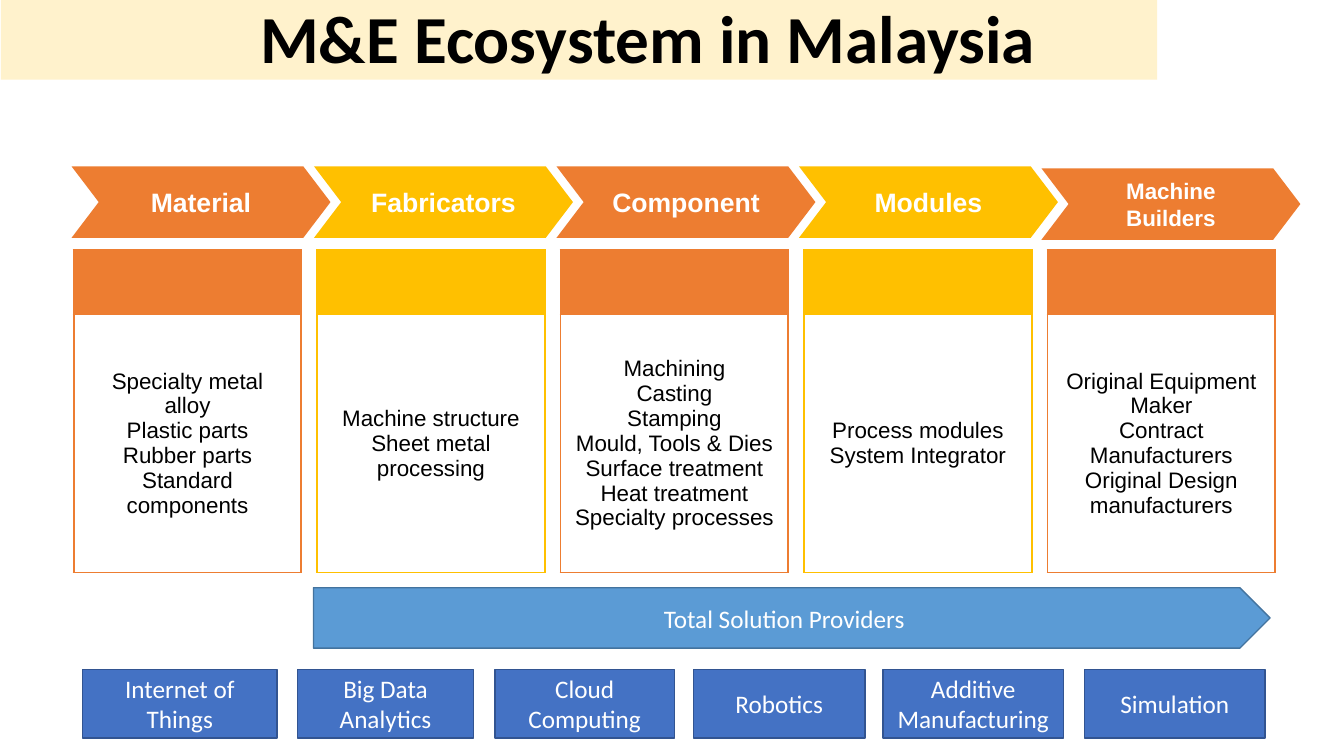
from lxml.etree import SubElement
from pptx import Presentation
from pptx.dml.color import RGBColor
from pptx.enum.shapes import MSO_SHAPE
from pptx.enum.text import MSO_ANCHOR, PP_ALIGN
from pptx.oxml.ns import qn
from pptx.util import Pt

ORANGE, GOLD = "ED7D31", "FFC000"
CREAM, WHITE, BLACK = "FFF2CC", "FFFFFF", "000000"
SKY, SKY_EDGE = "5B9BD5", "43739E"
BLUE, BLUE_EDGE = "4472C4", "325491"

TITLE = "M&E Ecosystem in Malaysia"
STAGES = [  # name, label size, colour, activities
    ("Material", 19, ORANGE,
     ["Specialty metal alloy", "Plastic parts", "Rubber parts",
      "Standard components"]),
    ("Fabricators", 19, GOLD,
     ["Machine structure", "Sheet metal processing"]),
    ("Component", 19, ORANGE,
     ["Machining", "Casting", "Stamping", "Mould, Tools & Dies",
      "Surface treatment", "Heat treatment", "Specialty processes"]),
    ("Modules", 19, GOLD, ["Process modules", "System Integrator"]),
    ("Machine Builders", 16, ORANGE,
     ["Original Equipment Maker", "Contract Manufacturers",
      "Original Design manufacturers"]),
]
PROVIDERS = "Total Solution Providers"
TECHNOLOGIES = [  # name, left, width
    ("Internet of Things", 59, 139),
    ("Big Data Analytics", 212.4, 126),
    ("Cloud Computing", 353.5, 128.2),
    ("Robotics", 495.4, 122.4),
    ("Additive Manufacturing", 630.7, 128.9),
    ("Simulation", 774.7, 128.9),
]
INSET_X, INSET_Y = 9.36, 5.04
CHEVRON_W, CHEVRON_H, CHEVRON_STEP = 185, 51.1, 173.2
CARD_W, CARD_STEP, CARD_ROWS = 162.7, 173.9, (46.1, 184.3)
LABEL_W = 136.8


def rgb(value):
    return RGBColor.from_string(value)


def write(tf, *lines, size=18, font="Calibri", color=WHITE, bold=False,
          spacing=None, before=None):
    tf.word_wrap = True
    for i, line in enumerate(lines):
        p = tf.paragraphs[0] if i == 0 else tf.add_paragraph()
        p.alignment = PP_ALIGN.CENTER
        p.line_spacing = spacing
        p.space_before = None if before is None else Pt(before)
        r = p.add_run()
        r.text = line
        r.font.size, r.font.name, r.font.bold = Pt(size), font, bold
        r.font.color.rgb = rgb(color)


def set_insets(item):
    """Give a text frame or a table cell the wide margins."""
    item.margin_left = item.margin_right = Pt(INSET_X)
    item.margin_top = item.margin_bottom = Pt(INSET_Y)


def add_box(s, kind, x, y, w, h, fill, line=None, text=None):
    sp = s.shapes.add_shape(kind, Pt(x), Pt(y), Pt(w), Pt(h))
    sp.shadow.inherit = False
    sp.fill.solid()
    sp.fill.fore_color.rgb = rgb(fill)
    if line:
        sp.line.color.rgb = rgb(line)
        sp.line.width = Pt(1)
    else:
        sp.line.fill.background()
    if text:
        sp.text_frame.vertical_anchor = MSO_ANCHOR.MIDDLE
        write(sp.text_frame, text)
    return sp


def add_label(s, x, y, w, h, text, **fmt):
    tf = s.shapes.add_textbox(Pt(x), Pt(y), Pt(w), Pt(h)).text_frame
    set_insets(tf)
    tf.vertical_anchor = MSO_ANCHOR.MIDDLE
    write(tf, text, **fmt)


def set_borders(cell, color):
    pr = cell._tc.get_or_add_tcPr()
    for i, side in enumerate(("a:lnL", "a:lnR", "a:lnT", "a:lnB")):
        ln = pr.makeelement(qn(side), {"w": str(Pt(1.5))})
        fill = SubElement(ln, qn("a:solidFill"))
        SubElement(fill, qn("a:srgbClr"), val=color)
        pr.insert(i, ln)


def add_card(s, x, y, color, lines):
    frame = s.shapes.add_table(2, 1, Pt(x), Pt(y), Pt(CARD_W),
                               Pt(sum(CARD_ROWS)))
    table = frame.table
    table.first_row = table.horz_banding = False
    for row, height in zip(table.rows, CARD_ROWS):
        row.height = Pt(height)
    head, body = table.cell(0, 0), table.cell(1, 0)
    head.fill.solid()
    head.fill.fore_color.rgb = rgb(color)
    body.fill.background()
    body.vertical_anchor = MSO_ANCHOR.MIDDLE
    set_insets(body)
    write(body.text_frame, *lines, size=16, font="Arial", color=BLACK)
    for cell in (head, body):
        set_borders(cell, color)


def main():
    prs = Presentation()
    prs.slide_width, prs.slide_height = Pt(960), Pt(540)
    s = prs.slides.add_slide(prs.slide_layouts[6])

    add_box(s, MSO_SHAPE.RECTANGLE, 0.7, 0, 825.8, 56.9, CREAM)
    add_label(s, -17.3, 1.4, 960, 60.5, TITLE, size=48, color=BLACK,
              bold=True, spacing=0.8, before=10)

    for i, (name, size, color, lines) in enumerate(STAGES):
        add_card(s, 52.6 + i * CARD_STEP, 178.6, color, lines)
        x = 51.1 + i * CHEVRON_STEP
        y = 120.2 if i == len(STAGES) - 1 else 118.8
        chevron = add_box(s, MSO_SHAPE.CHEVRON, x, y, CHEVRON_W, CHEVRON_H,
                          color)
        chevron.adjustments[0] = 0.38
        add_label(s, x + (CHEVRON_W - LABEL_W) / 2, y + 1.5, LABEL_W, 48.2,
                  name, size=size, font="Arial", bold=True)

    add_box(s, MSO_SHAPE.PENTAGON, 223.9, 419.8, 683.3, 43.2, SKY, SKY_EDGE,
            PROVIDERS)
    for name, x, w in TECHNOLOGIES:
        add_box(s, MSO_SHAPE.RECTANGLE, x, 478.1, w, 49, BLUE, BLUE_EDGE, name)

    prs.save("out.pptx")


if __name__ == "__main__":
    main()
